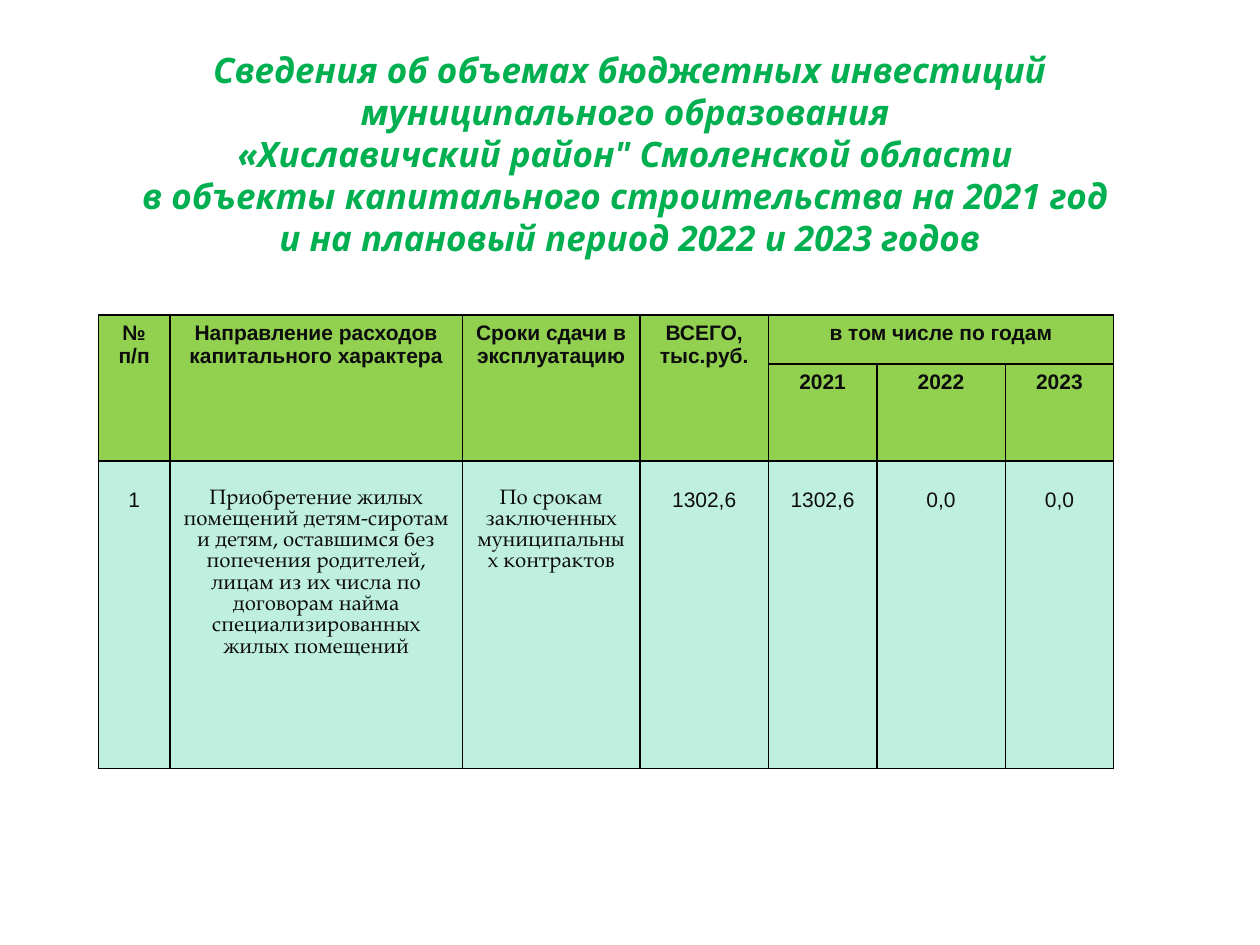
import pptx
import pptx.util
import pptx.dml.color
import pptx.enum.text
import pptx.oxml.ns
import lxml.etree

Pt = pptx.util.Pt
Inches = pptx.util.Inches
RGBColor = pptx.dml.color.RGBColor
CENTER = pptx.enum.text.PP_ALIGN.CENTER
qn = pptx.oxml.ns.qn

GREEN = RGBColor(0x00, 0xB0, 0x50)
LIME = RGBColor(0x92, 0xD0, 0x50)
MINT = RGBColor(0xBF, 0xEF, 0xDF)
INK = RGBColor(0x0D, 0x0D, 0x0D)
LINE = RGBColor(0x00, 0x00, 0x00)
SANS, SERIF = "Arial", "TeX Gyre Pagella"

TITLE = [
    "Сведения об объемах бюджетных инвестиций муниципального образования ",
    "«Хиславичский район\" Смоленской области ",
    "в объекты капитального строительства на 2021 год ",
    "и на плановый период 2022 и 2023 годов",
]
COLS = [0.57, 2.32, 1.41, 1.02, 0.86, 1.02, 0.86]
ROWS = [0.39, 0.77, 2.44]
HEADS = [
    ["№", "п/п"],
    ["Направление расходов капитального характера"],
    ["Сроки сдачи в эксплуатацию"],
    ["ВСЕГО, тыс.руб."],
    ["в том числе по годам"],
]
YEARS = ["2021", "2022", "2023"]
ITEM = [
    ("1", SANS),
    ("Приобретение жилых помещений детям-сиротам и детям, оставшимся без "
     "попечения родителей, лицам из их числа по договорам найма "
     "специализированных жилых помещений", SERIF),
    ("По срокам заключенных муниципальных контрактов", SERIF),
    ("1302,6", SANS),
    ("1302,6", SANS),
    ("0,0", SANS),
    ("0,0", SANS),
]


def style(run, size, face, color, bold, slant=False):
    font = run.font
    font.size, font.name = Pt(size), face
    font.bold, font.italic = bold, slant
    font.color.rgb = color


def title(slide, x, y, w, h):
    shape = slide.shapes.title
    shape.left, shape.top, shape.width, shape.height = x, y, w, h
    frame = shape.text_frame
    frame.word_wrap = True
    frame.auto_size = pptx.enum.text.MSO_AUTO_SIZE.NONE
    frame.vertical_anchor = pptx.enum.text.MSO_ANCHOR.MIDDLE
    frame.margin_bottom = Inches(0.33)
    para = frame.paragraphs[0]
    para.alignment = CENTER
    para.line_spacing = Pt(24)
    for i, text in enumerate(TITLE):
        if i:
            para.add_line_break()
        run = para.add_run()
        run.text = text
        style(run, 20, "Open Sans", GREEN, True, True)


def frame_cell(cell, color):
    props = cell._tc.get_or_add_tcPr()
    for side in ("a:lnL", "a:lnR", "a:lnT", "a:lnB"):
        edge = lxml.etree.SubElement(props, qn(side), w=str(Pt(1)))
        fill = lxml.etree.SubElement(edge, qn("a:solidFill"))
        lxml.etree.SubElement(fill, qn("a:srgbClr"), val=str(LINE))
    cell.fill.solid()
    cell.fill.fore_color.rgb = color


def write(cell, lines, face=SANS, bold=True):
    frame = cell.text_frame
    for i, text in enumerate(lines):
        para = frame.add_paragraph() if i else frame.paragraphs[0]
        para.alignment = CENTER
        if face == SERIF:
            para.line_spacing = Pt(12.15)
        run = para.add_run()
        run.text = text
        style(run, 12, face, INK, bold)


def table(slide, x, y, w, h):
    grid = slide.shapes.add_table(len(ROWS), len(COLS), x, y, w, h).table
    for col, part in zip(grid.columns, COLS):
        col.width = int(w * part / sum(COLS))
    for row, part in zip(grid.rows, ROWS):
        row.height = int(h * part / sum(ROWS))
    for r in range(len(ROWS)):
        for c in range(len(COLS)):
            frame_cell(grid.cell(r, c), LIME if r < 2 else MINT)
    for c, lines in enumerate(HEADS):
        cell = grid.cell(0, c)
        cell.merge(grid.cell(1, c) if c < 4 else grid.cell(0, 6))
        write(cell, lines)
    for c, year in enumerate(YEARS, 4):
        write(grid.cell(1, c), [year])
    for c, (text, face) in enumerate(ITEM):
        cell = grid.cell(2, c)
        cell.margin_top = Inches(0.22)
        write(cell, [text], face, False)


def main():
    deck = pptx.Presentation()
    deck.slide_width, deck.slide_height = Inches(10), Inches(7.5)
    slide = deck.slides.add_slide(deck.slide_layouts[5])
    title(slide, Inches(0.5), Inches(0.3), Inches(9), Inches(2.12))
    table(slide, Inches(0.78), Inches(2.5), Inches(sum(COLS)), Inches(sum(ROWS)))
    deck.save("out.pptx")


if __name__ == "__main__":
    main()
